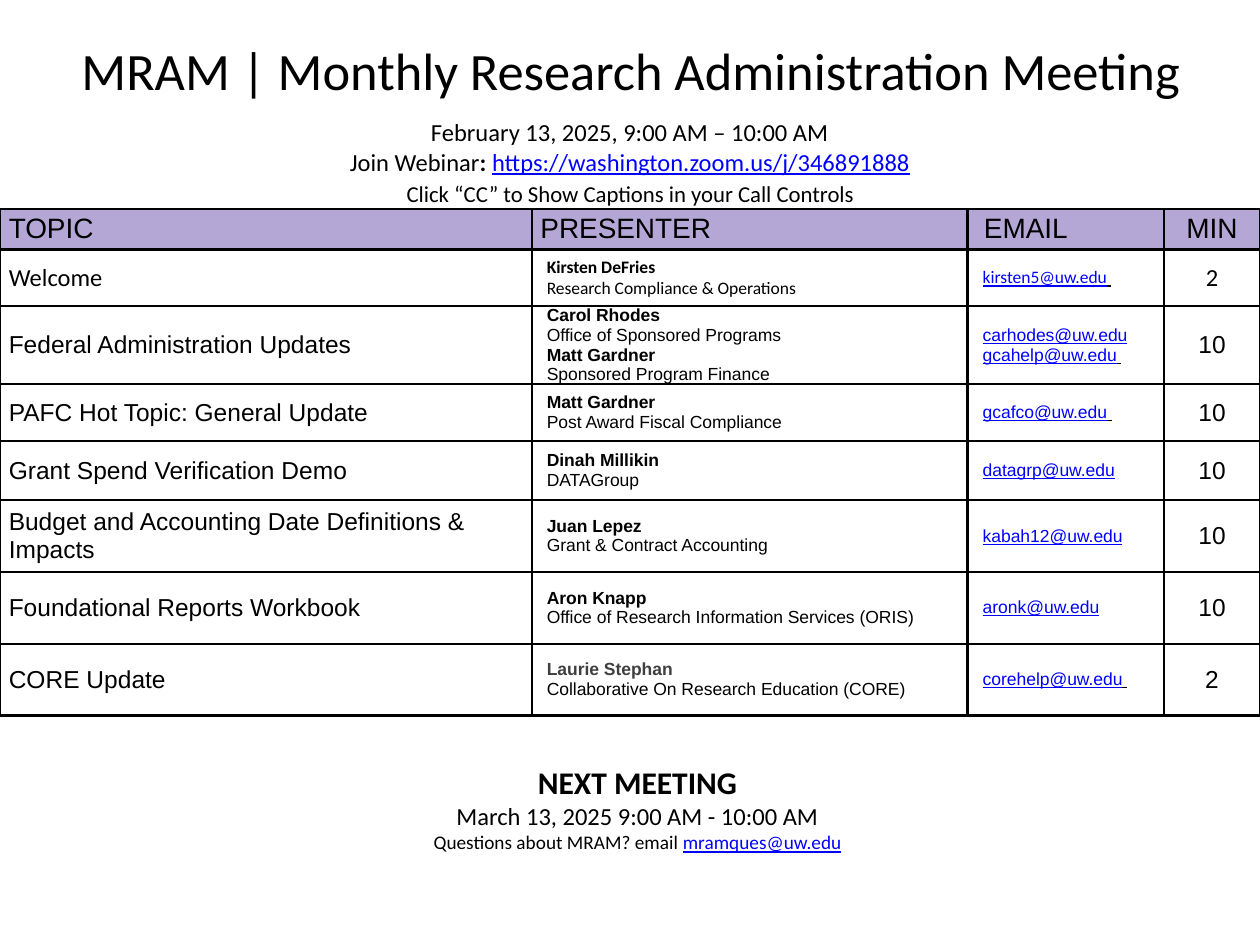
from dataclasses import dataclass

from lxml import etree
from pptx import Presentation
from pptx import util as u
from pptx.dml.color import RGBColor
from pptx.enum import text
from pptx.oxml import ns

PX = 9144  # 100 px to the inch


@dataclass(frozen=True)
class Theme:
    ink: RGBColor = RGBColor.from_string("000000")
    soft_ink: RGBColor = RGBColor.from_string("3F3F3F")
    link: RGBColor = RGBColor.from_string("0000FF")
    header_fill: RGBColor = RGBColor.from_string("B4A7D6")
    row_fill: RGBColor = RGBColor.from_string("FFFFFF")
    border: str = "000000"
    sans: str = "Arial"
    humanist: str = "Calibri"
    title: int = 30
    heading: int = 18
    header: int = 16
    body: int = 14
    caption: int = 13
    note: int = 11
    detail: int = 10


theme = Theme()


def write(paragraph, runs, size, font=theme.humanist, bold=False, color=theme.ink, align=None):
    """Fill a paragraph with (text, style) runs; style is plain, bold, link or tail."""
    paragraph.font.size = u.Pt(size)
    paragraph.font.name = font
    paragraph.font.bold = bold
    paragraph.font.color.rgb = color
    paragraph.alignment = align
    paragraph.space_before = u.Pt(0)
    for content, style in runs:
        run = paragraph.add_run()
        run.text = content
        if style == "bold":
            run.font.bold = True
        if style in ("link", "tail"):
            run.font.underline = True
        if style == "link":
            run.font.color.rgb = theme.link


def style_cell(cell, fill, left, right):
    cell.margin_left, cell.margin_right = left * PX, right * PX
    cell.margin_top = cell.margin_bottom = 0
    cell.vertical_anchor = text.MSO_ANCHOR.MIDDLE
    properties = cell._tc.get_or_add_tcPr()
    for side in ("a:lnL", "a:lnR", "a:lnT", "a:lnB"):
        line = etree.SubElement(properties, ns.qn(side), w=str(u.Pt(1.5)))
        solid = etree.SubElement(line, ns.qn("a:solidFill"))
        etree.SubElement(solid, ns.qn("a:srgbClr"), val=theme.border)
    cell.fill.solid()
    cell.fill.fore_color.rgb = fill


presentation = Presentation()
presentation.slide_width, presentation.slide_height = 1000 * PX, 750 * PX
slide = presentation.slides.add_slide(presentation.slide_layouts[0])
center = text.PP_ALIGN.CENTER

# Agenda table
headers = ["TOPIC", "PRESENTER", "EMAIL", "MIN"]
column_widths = [422, 346, 156, 76]
row_heights = [32, 45, 55, 45, 47, 57, 57, 57]
header_margins = [(7, 7), (7, 7), (13, 7), (7, 7)]
row_margins = [(7, 7), (12, 12), (12, 12), (7, 7)]
# Topic, (presenter, office) pairs, e-mails, minutes; a final space is underlined in black
agenda = [
    ("Welcome", [("Kirsten DeFries", "Research Compliance & Operations")],
     ["kirsten5@uw.edu "], 2),
    ("Federal Administration Updates",
     [("Carol Rhodes", "Office of Sponsored Programs"),
      ("Matt Gardner", "Sponsored Program Finance")],
     ["carhodes@uw.edu", "gcahelp@uw.edu "], 10),
    ("PAFC Hot Topic: General Update", [("Matt Gardner", "Post Award Fiscal Compliance")],
     ["gcafco@uw.edu "], 10),
    ("Grant Spend Verification Demo", [("Dinah Millikin", "DATAGroup")],
     ["datagrp@uw.edu"], 10),
    ("Budget and Accounting Date Definitions & Impacts",
     [("Juan Lepez", "Grant & Contract Accounting")], ["kabah12@uw.edu"], 10),
    ("Foundational Reports Workbook",
     [("Aron Knapp", "Office of Research Information Services (ORIS)")],
     ["aronk@uw.edu"], 10),
    ("CORE Update", [("Laurie Stephan", "Collaborative On Research Education (CORE)")],
     ["corehelp@uw.edu "], 2),
]

table = slide.shapes.add_table(
    len(row_heights), len(column_widths), 0, 166 * PX,
    sum(column_widths) * PX, sum(row_heights) * PX).table
table.first_row = table.horz_banding = False
for column, width in zip(table.columns, column_widths):
    column.width = width * PX
for row, height in zip(table.rows, row_heights):
    row.height = height * PX

for index, (header, margins) in enumerate(zip(headers, header_margins)):
    cell = table.cell(0, index)
    style_cell(cell, theme.header_fill, *margins)
    write(cell.text_frame.paragraphs[0], [(header, "plain")], theme.header, theme.sans,
          align=center if header == "MIN" else None)

for row_index, (topic, presenters, emails, minutes) in enumerate(agenda, start=1):
    font = theme.humanist if topic == "Welcome" else theme.sans
    name_color = theme.soft_ink if topic == "CORE Update" else theme.ink
    cells = [table.cell(row_index, index) for index in range(len(headers))]
    for cell, margins in zip(cells, row_margins):
        style_cell(cell, theme.row_fill, *margins)
    topic_frame, presenter_frame, email_frame, minutes_frame = [c.text_frame for c in cells]

    write(topic_frame.paragraphs[0], [(topic, "plain")], theme.body, font)
    write(minutes_frame.paragraphs[0], [(str(minutes), "plain")], theme.body, font, align=center)
    for index, (name, office) in enumerate(presenters):
        paragraph = presenter_frame.add_paragraph() if index else presenter_frame.paragraphs[0]
        write(paragraph, [(name, "plain")], theme.detail, font, True, name_color)
        write(presenter_frame.add_paragraph(), [(office, "plain")], theme.detail, font)
    for index, email in enumerate(emails):
        paragraph = email_frame.add_paragraph() if index else email_frame.paragraphs[0]
        runs = [(email.rstrip(), "link")]
        if email.endswith(" "):
            runs.append((" ", "tail"))
        write(paragraph, runs, theme.detail, font)

# Title, meeting details and next meeting: each line is runs, size, bold, line spacing
title = slide.shapes.title
details = slide.placeholders[1]
next_meeting = slide.shapes.add_textbox(0, 0, PX, PX)
blocks = [
    (title, (2, 20, 998, 82), [
        ([("MRAM | Monthly Research Administration Meeting", "plain")], theme.title, False, 1.0),
    ]),
    (details, (0, 83, 1000, 100), [
        ([("February 13, 2025, 9:00 AM – 10:00 AM", "plain")], theme.body, False, 1.0),
        ([("Join Webinar", "plain"), (": ", "bold"),
          ("https://washington.zoom.us/j/346891888", "link")], theme.body, False, 1.0),
        ([("Click “CC” to Show Captions in your Call Controls", "plain")],
         theme.caption, False, 1.15),
    ]),
    (next_meeting, (7, 596, 998, 123), [
        ([("NEXT MEETING", "plain")], theme.heading, True, 1.0),
        ([("March 13, 2025 9:00 AM - 10:00 AM", "plain")], theme.body, False, 1.0),
        ([("Questions about MRAM? email ", "plain"), ("mramques@uw.edu", "link")],
         theme.note, False, 1.0),
    ]),
]
for shape, box, lines in blocks:
    shape.left, shape.top, shape.width, shape.height = [value * PX for value in box]
    frame = shape.text_frame
    frame.word_wrap = True
    frame.auto_size = text.MSO_AUTO_SIZE.NONE
    frame.vertical_anchor = text.MSO_ANCHOR.TOP
    frame.margin_left = frame.margin_right = frame.margin_top = frame.margin_bottom = 10 * PX
    for index, (runs, size, bold, spacing) in enumerate(lines):
        paragraph = frame.add_paragraph() if index else frame.paragraphs[0]
        write(paragraph, runs, size, bold=bold, align=center)
        paragraph.line_spacing = spacing

presentation.save("out.pptx")
